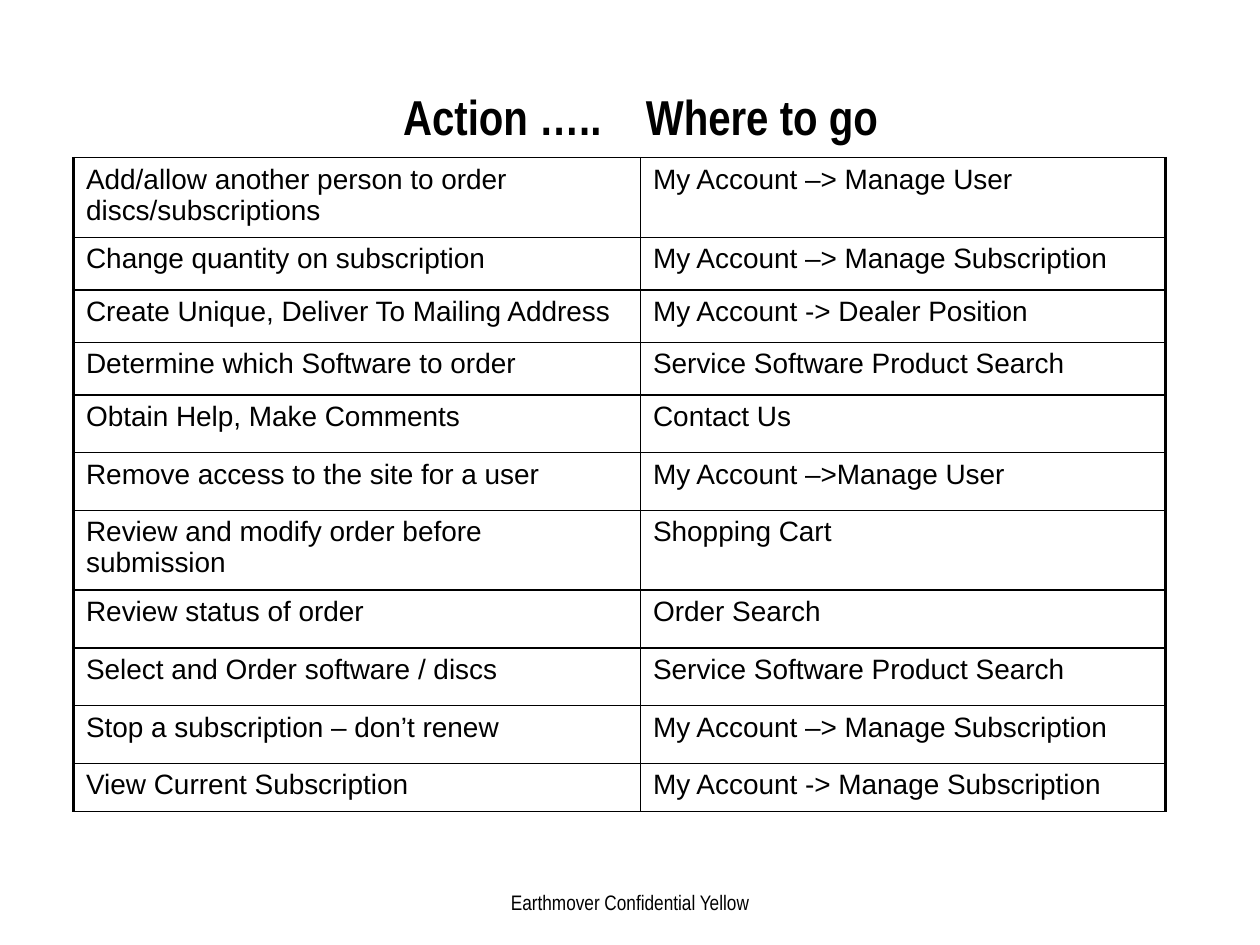
from dataclasses import dataclass
from typing import NamedTuple

from lxml.etree import SubElement
from pptx import Presentation
from pptx.dml.color import RGBColor
from pptx.enum.text import MSO_ANCHOR as Anchor, PP_ALIGN as Align
from pptx.oxml.ns import qn
from pptx.util import Inches, Pt

GRID = Inches(1) / 12  # the slide is 120 columns by 90 rows
BLACK = "000000"
THIN, THICK = 1, 2.25


class Box(NamedTuple):
    left: float
    top: float
    width: float
    height: float


@dataclass
class Guide:
    action: str
    place: str
    height: float = 5.5


COLUMN_WIDTHS = (54, 50)
TABLE_BOX = Box(7, 15, sum(COLUMN_WIDTHS), 62.3)
GUIDES = [
    Guide("Add/allow another person to order discs/subscriptions", "My Account –> Manage User", 7.3),
    Guide("Change quantity on subscription", "My Account –> Manage Subscription", 5),
    Guide("Create Unique, Deliver To Mailing Address", "My Account -> Dealer Position", 5),
    Guide("Determine which Software to order", "Service Software Product Search", 5),
    Guide("Obtain Help, Make Comments", "Contact Us"),
    Guide("Remove access to the site for a user", "My Account –>Manage User"),
    Guide("Review and modify order before submission", "Shopping Cart", 7.6),
    Guide("Review status of order", "Order Search"),
    Guide("Select and Order software / discs", "Service Software Product Search"),
    Guide("Stop a subscription – don’t renew", "My Account –> Manage Subscription"),
    Guide("View Current Subscription", "My Account -> Manage Subscription", 4.6),
]


def grid(cells: float) -> int:
    return round(cells * GRID)


def color(value: str) -> RGBColor:
    return RGBColor.from_string(value)


def set_font(paragraph, name: str, size: float, bold: bool = False) -> None:
    font = paragraph.font
    font.name, font.size, font.bold = name, Pt(size), bold
    font.color.rgb = color(BLACK)


def add_centred_text(slide, box: Box, runs: list[str], size: float, bold: bool = False):
    shape = slide.shapes.add_textbox(*map(grid, box))
    frame = shape.text_frame
    frame.word_wrap = True
    frame.vertical_anchor = Anchor.MIDDLE
    paragraph = frame.paragraphs[0]
    paragraph.alignment = Align.CENTER
    for text in runs:
        paragraph.add_run().text = text
    set_font(paragraph, "Arial Narrow", size, bold)
    return paragraph


def add_border(cell, side: str, width: float) -> None:
    properties = cell._tc.get_or_add_tcPr()
    line = SubElement(properties, qn(f"a:ln{side}"), w=str(Pt(width)))
    fill = SubElement(line, qn("a:solidFill"))
    SubElement(fill, qn("a:srgbClr"), val=BLACK)


def fill_cell(cell, text: str, thick_side: str) -> None:
    cell.text = text
    set_font(cell.text_frame.paragraphs[0], "Arial", 16)
    for side in "LRTB":
        add_border(cell, side, THICK if side == thick_side else THIN)
    cell.fill.background()


def add_guide_table(slide) -> None:
    table = slide.shapes.add_table(len(GUIDES), 2, *map(grid, TABLE_BOX)).table
    table.first_row = table.horz_banding = False
    for column, width in zip(table.columns, COLUMN_WIDTHS):
        column.width = grid(width)
    for row, guide in zip(table.rows, GUIDES):
        row.height = grid(guide.height)
        fill_cell(row.cells[0], guide.action, "L")
        fill_cell(row.cells[1], guide.place, "R")


def main() -> None:
    presentation = Presentation()
    presentation.slide_width, presentation.slide_height = grid(120), grid(90)
    slide = presentation.slides.add_slide(presentation.slide_layouts[6])

    add_centred_text(slide, Box(46, 83.8, 28, 4.2), ["Earthmover Confidential Yellow"], 12)
    title = add_centred_text(slide, Box(9, 6, 104, 10), ["Action …..", " ", "Where to go"], 28, True)
    # Character spacing, in hundredths of a point, widens the gap.
    title.runs[1].font._element.set("spc", "1900")
    add_guide_table(slide)
    presentation.save("out.pptx")


if __name__ == "__main__":
    main()
